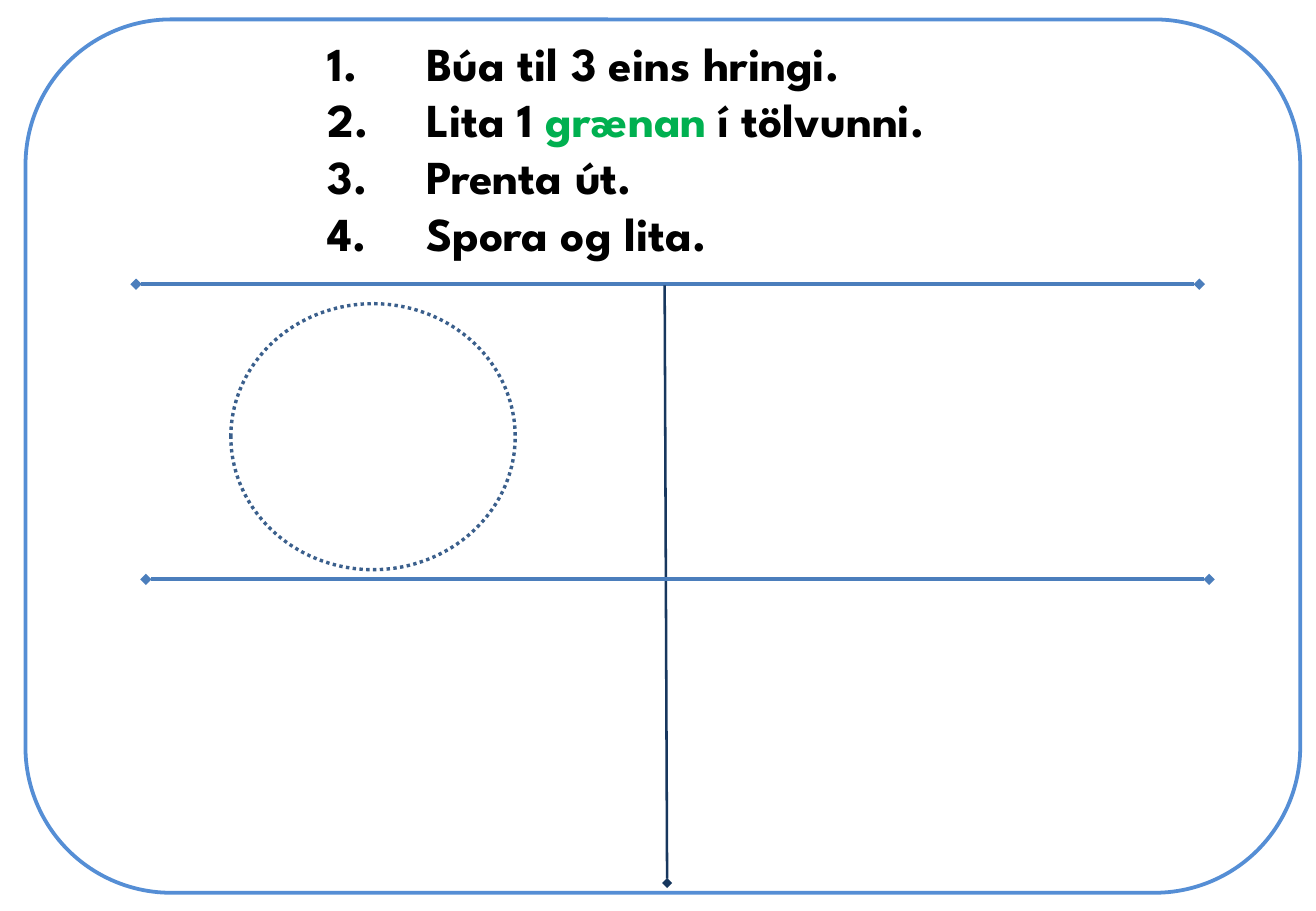
from pptx import Presentation
from pptx.dml.color import RGBColor
from pptx.enum.dml import MSO_LINE
from pptx.enum.shapes import MSO_CONNECTOR, MSO_SHAPE
from pptx.enum.text import MSO_AUTO_SIZE
from pptx.oxml.ns import qn
from pptx.util import Inches, Pt
from lxml import etree

STRAIGHT = MSO_CONNECTOR.STRAIGHT
ROUNDED_FRAME = MSO_SHAPE.FLOWCHART_ALTERNATE_PROCESS
OVAL = MSO_SHAPE.OVAL
DOTTED = MSO_LINE.ROUND_DOT
GROW = MSO_AUTO_SIZE.SHAPE_TO_FIT_TEXT

BLACK = RGBColor(0x00, 0x00, 0x00)
GREEN = RGBColor(0x00, 0xB0, 0x50)
FRAME_BLUE = RGBColor(0x55, 0x8E, 0xD5)
RULE_BLUE = RGBColor(0x4B, 0x7E, 0xBC)
DIVIDER_NAVY = RGBColor(0x17, 0x37, 0x5E)
CIRCLE_BLUE = RGBColor(0x3A, 0x5F, 0x8C)

FONT = "League Spartan"
BLANK_LAYOUT = 6
RULE_LENGTH = 8.75

STEPS = [
    [("Búa til 3 eins hringi.", BLACK)],
    [("Lita 1 ", BLACK), ("grænan", GREEN), (" í tölvunni.", BLACK)],
    [("Prenta út.", BLACK)],
    [("Spora og lita.", BLACK)],
]


def add_outline(page, kind, left, top, width, height, color, weight):
    shape = page.shapes.add_shape(
        kind, Inches(left), Inches(top), Inches(width), Inches(height))
    shape.shadow.inherit = False
    shape.fill.background()
    shape.line.color.rgb = color
    shape.line.width = Pt(weight)
    return shape


def add_line(page, start, end, color, weight, diamond_ends):
    points = [Inches(value) for value in (*start, *end)]
    connector = page.shapes.add_connector(STRAIGHT, *points)
    connector.line.color.rgb = color
    connector.line.width = Pt(weight)
    outline = connector.line._get_or_add_ln()
    for end_tag in diamond_ends:
        etree.SubElement(outline, qn(end_tag), type="diamond")
    etree.SubElement(connector._element.spPr, qn("a:effectLst"))


def number_paragraph(para, indent):
    properties = para._p.get_or_add_pPr()
    properties.set("marL", str(Inches(indent)))
    properties.set("indent", str(-Inches(indent)))
    etree.SubElement(properties, qn("a:buFont"), typeface="+mj-lt")
    etree.SubElement(properties, qn("a:buAutoNum"), type="arabicPeriod")


def add_numbered_list(page, left, top, width, height, steps):
    box = page.shapes.add_textbox(
        Inches(left), Inches(top), Inches(width), Inches(height))
    frame = box.text_frame
    frame.word_wrap = False
    frame.auto_size = GROW
    for index, step in enumerate(steps):
        para = frame.add_paragraph() if index else frame.paragraphs[0]
        number_paragraph(para, 0.81)
        for text, color in step:
            span = para.add_run()
            span.text = text
            span.font.name = FONT
            span.font.size = Pt(28)
            span.font.bold = True
            span.font.color.rgb = color


def main():
    deck = Presentation()
    deck.slide_width = Inches(10.83)
    deck.slide_height = Inches(7.5)
    page = deck.slides.add_slide(deck.slide_layouts[BLANK_LAYOUT])

    add_numbered_list(page, 2.6, 0.23, 5.55, 1.99, STEPS)
    add_outline(page, ROUNDED_FRAME, 0.21, 0.16, 10.49, 7.19, FRAME_BLUE, 2.25)

    both_ends = ("a:headEnd", "a:tailEnd")
    add_line(page, (1.12, 2.34), (1.12 + RULE_LENGTH, 2.34),
             RULE_BLUE, 2.25, both_ends)
    add_line(page, (5.47, 2.35), (5.49, 7.27),
             DIVIDER_NAVY, 1.5, ("a:tailEnd",))
    add_line(page, (1.2, 4.77), (1.2 + RULE_LENGTH, 4.77),
             RULE_BLUE, 2.25, both_ends)

    circle = add_outline(page, OVAL, 1.9, 2.5, 2.34, 2.19, CIRCLE_BLUE, 2)
    circle.line.dash_style = DOTTED

    deck.save("out.pptx")


if __name__ == "__main__":
    main()
